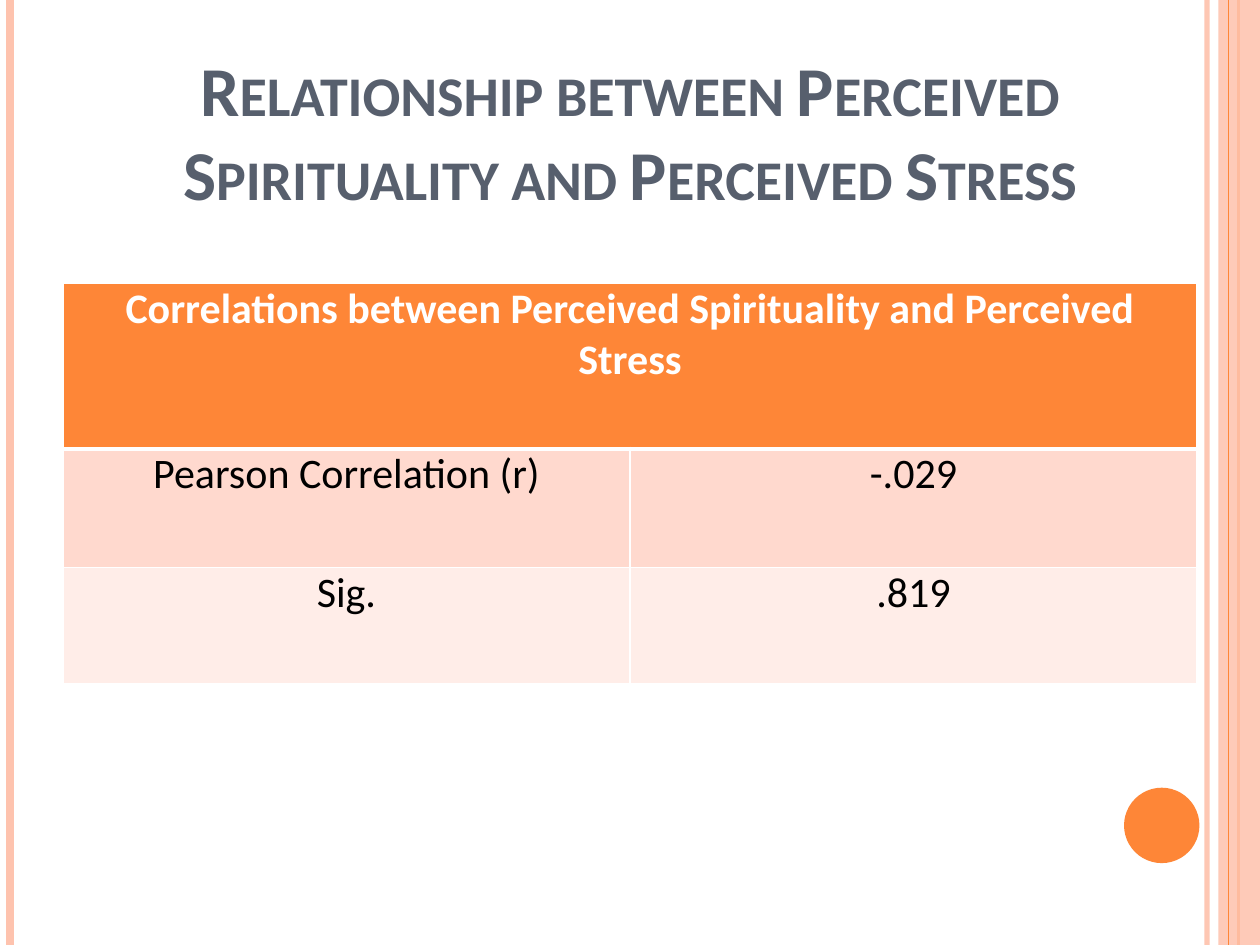
from lxml import etree
from pptx import Presentation
from pptx import util as u
from pptx.dml.color import RGBColor
from pptx.enum import shapes, text
from pptx.oxml.ns import qn

WIDE, HIGH = 25.4, 19.05
ORANGE, PEACH, WHITE = "FE8637", "FEC3AE", "FFFFFF"

TITLE = "Relationship between Perceived Spirituality and Perceived Stress"
HEAD = "Correlations between Perceived Spirituality and Perceived Stress"
ROWS = [(HEAD, ""), ("Pearson Correlation (r)", "-.029"), ("Sig.", ".819")]
FILLS = [ORANGE, "FFD9CE", "FFEDE8"]
TALL = [3.33, 2.39, 2.34]
COL = 11.43

# x, colour, width in points, opacity in percent
BACK = [(24.33, PEACH, 3, 93), (0.2, PEACH, 4.5, 100), (24.97, ORANGE, 1.5, 100)]
FRONT = [(24.77, ORANGE, 0.75, 100)]
# preset, box, colour, opacity
BAND = (shapes.MSO_SHAPE.RECTANGLE, (24.56, 0, 0.84, HIGH), PEACH, 87)
DOT = (shapes.MSO_SHAPE.OVAL, (22.66, 15.88, 1.52, 1.52), ORANGE, 100)

TITLE_FONT = {"name": "Calibri", "size": u.Pt(40), "bold": True}
HEAD_FONT = {"name": "Calibri", "size": u.Pt(24), "bold": True}
BODY_FONT = {**HEAD_FONT, "bold": False}


def paint(fill, color, alpha=100):
    fill.solid()
    fill.fore_color.rgb = RGBColor.from_string(color)
    if alpha < 100:
        tone = fill._xPr.find(f".//{qn('a:srgbClr')}")
        etree.SubElement(tone, qn("a:alpha")).set("val", str(alpha * 1000))


def box(nums):
    return [u.Cm(n) for n in nums]


def write(frame, words, font, color):
    """Put one centred run in the frame and return it."""
    para = frame.paragraphs[0]
    para.alignment = text.PP_ALIGN.CENTER
    run = para.add_run()
    run.text = words
    for key, val in font.items():
        setattr(run.font, key, val)
    paint(run.font.fill, color)
    return run


def rule(slide, x, color, width, alpha):
    """Draw a line down the full height of the slide."""
    line = slide.shapes.add_connector(
        shapes.MSO_CONNECTOR.STRAIGHT, *box((x, 0, x, HIGH)))
    line.line.width = u.Pt(width)
    paint(line.line.fill, color, alpha)
    etree.SubElement(line._element.spPr, qn("a:effectLst"))


def form(slide, kind, spot, color, alpha):
    """Draw a filled shape without outline or shadow."""
    shape = slide.shapes.add_shape(kind, *box(spot))
    shape.shadow.inherit = False
    shape.line.fill.background()
    paint(shape.fill, color, alpha)


def edge(cell, sides):
    """Give the cell white borders; sides maps a tag to points."""
    prop = cell._tc.get_or_add_tcPr()
    for spot, (tag, width) in enumerate(sides.items()):
        line = etree.Element(qn(f"a:{tag}"), w=str(u.Pt(width)))
        solid = etree.SubElement(line, qn("a:solidFill"))
        etree.SubElement(solid, qn("a:srgbClr")).set("val", WHITE)
        prop.insert(spot, line)


def grid(slide):
    table = slide.shapes.add_table(
        len(ROWS), 2, *box((1.27, 5.72, 2 * COL, sum(TALL)))).table
    for col in table.columns:
        col.width = u.Cm(COL)
    inset = {"margin_left": u.Cm(0.18), "margin_right": u.Cm(0.18),
             "margin_top": 0, "margin_bottom": 0}
    for r, row in enumerate(ROWS):
        table.rows[r].height = u.Cm(TALL[r])
        font, color = (BODY_FONT, "000000") if r else (HEAD_FONT, WHITE)
        for c, words in enumerate(row):
            cell = table.cell(r, c)
            for key, val in inset.items():
                setattr(cell, key, val)
            paint(cell.fill, FILLS[r])
            edge(cell, {"lnL": 1, "lnR": 1, "lnT": 3 if r == 1 else 1,
                        "lnB": 1 if r else 3})
            if words:
                write(cell.text_frame, words, font, color)
    table.cell(0, 0).merge(table.cell(0, 1))


def main():
    deck = Presentation()
    deck.slide_width, deck.slide_height = box((WIDE, HIGH))
    slide = deck.slides.add_slide(deck.slide_layouts[6])
    for item in BACK:
        rule(slide, *item)
    form(slide, *BAND)
    for item in FRONT:
        rule(slide, *item)
    form(slide, *DOT)

    frame = slide.shapes.add_textbox(*box((1.27, 0.76, 22.86, 3.68))).text_frame
    frame.word_wrap = True
    frame.vertical_anchor = text.MSO_ANCHOR.BOTTOM
    run = write(frame, TITLE, TITLE_FONT, "575F6D")
    run.font._element.set("cap", "small")
    grid(slide)
    deck.save("out.pptx")


if __name__ == "__main__":
    main()
